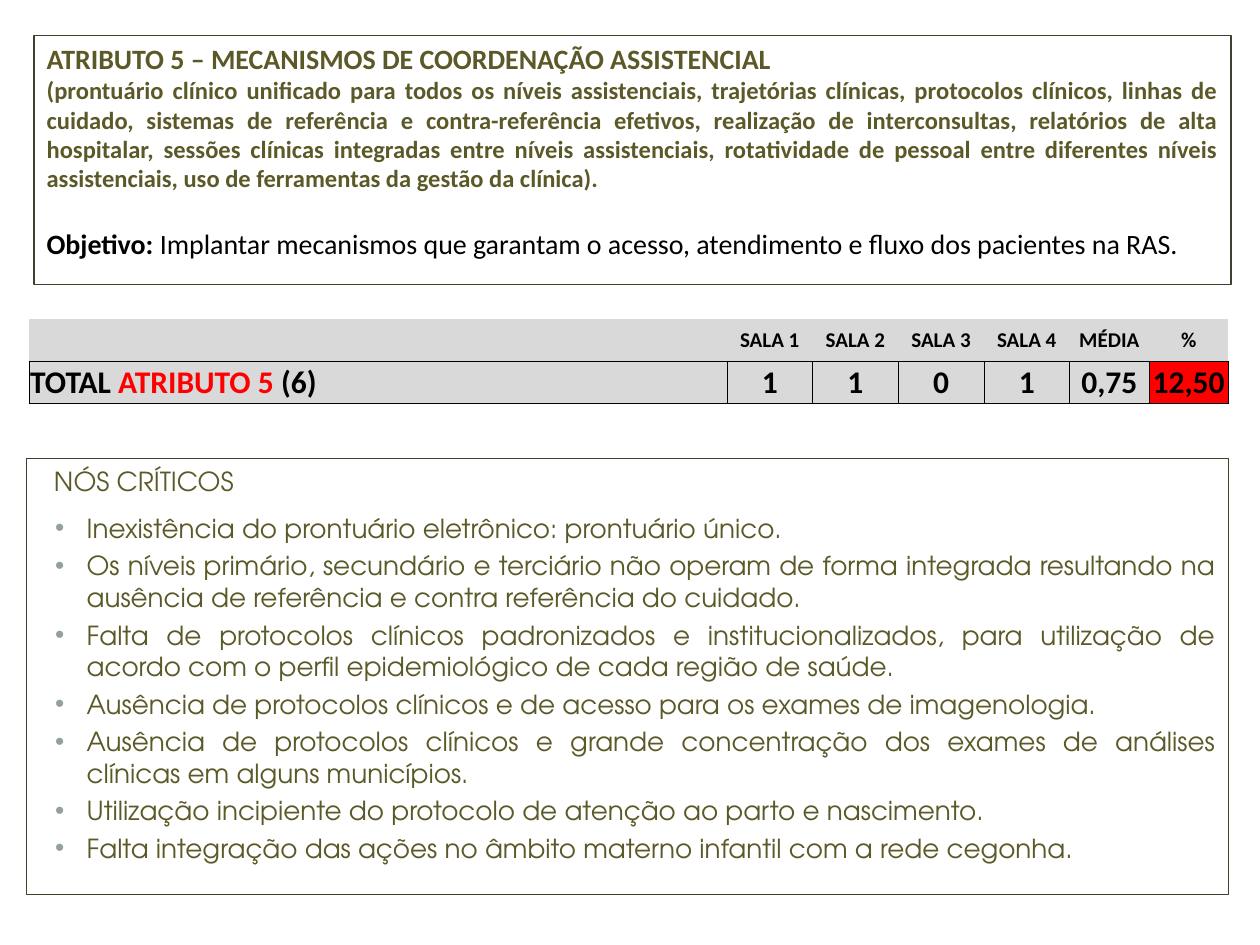
from dataclasses import dataclass

from pptx import Presentation
from pptx.dml.color import RGBColor as RGB
from pptx.enum.shapes import MSO_SHAPE as Shape
from pptx.enum.text import MSO_ANCHOR as Anchor, MSO_AUTO_SIZE as Fit, PP_ALIGN as Align
from pptx.oxml import parse_xml
from pptx.oxml.ns import nsdecls, qn
from pptx.util import Inches, Pt


@dataclass(frozen=True)
class Theme:
    olive: str = "5C5928"
    edge: str = "42402C"
    dot: str = "93A299"
    black: str = "000000"
    white: str = "FFFFFF"
    gray: str = "D9D9D9"
    red: str = "FF0000"
    sans: str = "Calibri"
    round: str = "TeX Gyre Adventor"
    head: int = 16
    note: int = 14
    list: int = 15
    label: int = 12
    total: int = 18


THEME = Theme()
PLAIN = "{2D5ABB26-0587-4C30-8999-92F81FD0307C}"  # table style without grid

TITLE = "ATRIBUTO 5 – MECANISMOS DE COORDENAÇÃO ASSISTENCIAL"
SCOPE = (
    "(prontuário clínico unificado para todos os níveis assistenciais, trajetórias "
    "clínicas, protocolos clínicos, linhas de cuidado, sistemas de referência e "
    "contra-referência efetivos, realização de interconsultas, relatórios de alta "
    "hospitalar, sessões clínicas integradas entre níveis assistenciais, rotatividade "
    "de pessoal entre diferentes níveis assistenciais, uso de ferramentas da gestão "
    "da clínica)."
)
GOAL = ("Implantar mecanismos que garantam o acesso, atendimento e fluxo dos "
        "pacientes na RAS.")
KNOTS = [
    "Inexistência do prontuário eletrônico: prontuário único.",
    "Os níveis primário, secundário e terciário não operam de forma integrada "
    "resultando na ausência de referência e contra referência do cuidado.",
    "Falta de protocolos clínicos padronizados e institucionalizados, para utilização "
    "de acordo com o perfil epidemiológico de cada região de saúde.",
    "Ausência de protocolos clínicos e de acesso para os exames de imagenologia.",
    "Ausência de protocolos clínicos e grande concentração dos exames de análises "
    "clínicas em alguns municípios.",
    "Utilização incipiente do protocolo de atenção ao parto e nascimento.",
    "Falta integração das ações no âmbito materno infantil com a rede cegonha.",
]
WIDTHS = [3.98, 0.62, 0.94] + [0.68] * 4 + [0.63] * 2
LABELS = ["SALA 1", "SALA 2", "SALA 3", "SALA 4", "MÉDIA", "%"]
SCORES = ["1", "1", "0", "1", "0,75", "12,50"]
LEAD = len(WIDTHS) - len(LABELS)  # columns under the row heading


def style(font, size, color, face=THEME.sans, bold=True):
    font.size, font.name, font.bold = Pt(size), face, bold
    font.color.rgb = RGB.from_string(color)


def frame(shape, box):
    """Place a white, thinly outlined text panel."""
    shape.left, shape.top, shape.width, shape.height = map(Inches, box)
    shape.shadow.inherit = False
    shape.fill.solid()
    shape.fill.fore_color.rgb = RGB.from_string(THEME.white)
    shape.line.color.rgb = RGB.from_string(THEME.edge)
    shape.line.width = Pt(0.75)
    text = shape.text_frame
    text.word_wrap, text.auto_size = True, Fit.NONE
    text.vertical_anchor = Anchor.TOP
    return text


def add_head(slide, box):
    text = frame(slide.shapes.title, box)
    text.text = "\n".join([TITLE, SCOPE, "Objetivo: "])
    looks = [(THEME.head, THEME.olive), (THEME.note, THEME.olive),
             (THEME.head, THEME.black)]
    for para, (size, color) in zip(text.paragraphs, looks):
        para.alignment = Align.JUSTIFY
        style(para.font, size, color)
    para.space_before = Pt(19.5)
    run = para.add_run()
    run.text, run.font.bold = GOAL, False


def rule(cell):
    """Draw a thin line on all four sides of a cell."""
    props = cell._tc.get_or_add_tcPr()
    for spot, side in enumerate(("lnL", "lnR", "lnT", "lnB")):
        props.insert(spot, parse_xml(
            f'<a:{side} {nsdecls("a")} w="6350"><a:solidFill>'
            f'<a:srgbClr val="{THEME.black}"/></a:solidFill></a:{side}>'))


def add_scores(slide, box):
    grid = slide.shapes.add_table(2, len(WIDTHS), *map(Inches, box)).table
    grid.first_row = grid.horz_banding = False
    grid._tbl.tblPr.find(qn("a:tableStyleId")).text = PLAIN
    for col, width in zip(grid.columns, WIDTHS):
        col.width = Inches(width)
    rows = [([""] * LEAD + LABELS, THEME.label), ([""] * LEAD + SCORES, THEME.total)]
    for row, (words, size) in enumerate(rows):
        for col, word in enumerate(words):
            cell = grid.cell(row, col)
            cell.text, cell.vertical_anchor = word, Anchor.MIDDLE
            cell.margin_left = cell.margin_right = cell.margin_top = Inches(0.01)
            cell.margin_bottom = 0
            cell.fill.solid()
            cell.fill.fore_color.rgb = RGB.from_string(THEME.gray)
            para = cell.text_frame.paragraphs[0]
            para.alignment = Align.CENTER
            style(para.font, size, THEME.black)
            if row:
                rule(cell)
    cell.fill.fore_color.rgb = RGB.from_string(THEME.red)

    # Row heading
    first = grid.cell(1, 0)
    first.merge(grid.cell(1, LEAD - 1))
    para = first.text_frame.paragraphs[0]
    para.alignment = Align.LEFT
    for word, color in (("TOTAL ", THEME.black), ("ATRIBUTO 5 ", THEME.red),
                        ("(6)", THEME.black)):
        run = para.add_run()
        run.text = word
        style(run.font, THEME.total, color)


def indent(para, left, hang=0.0):
    props = para._p.get_or_add_pPr()
    props.set("marL", str(Inches(left)))
    props.set("indent", str(Inches(-hang)))
    return props


def add_knots(slide, box):
    panel = slide.shapes.add_shape(Shape.RECTANGLE, *map(Inches, box))
    text = frame(panel, box)
    text.text = "\n".join(["NÓS CRÍTICOS", *KNOTS])
    for spot, para in enumerate(text.paragraphs):
        para.alignment = Align.JUSTIFY
        style(para.font, THEME.list, THEME.olive, THEME.round, False)
        if not spot:
            indent(para, 0.12)
            continue
        para.space_before = Pt(9 if spot == 1 else 3.5)
        props = indent(para, 0.38, 0.25)
        marks = (f'<a:buClr {nsdecls("a")}><a:srgbClr val="{THEME.dot}"/></a:buClr>',
                 f'<a:buFont {nsdecls("a")} typeface="Arial"/>',
                 f'<a:buChar {nsdecls("a")} char="•"/>')
        place = props.index(props.find(qn("a:spcBef"))) + 1
        for step, mark in enumerate(marks):
            props.insert(place + step, parse_xml(mark))


def main():
    deck = Presentation()
    deck.slide_width, deck.slide_height = Inches(10), Inches(7.5)
    slide = deck.slides.add_slide(deck.slide_layouts[5])
    add_head(slide, (0.27, 0.28, 9.5, 1.98))
    add_knots(slide, (0.21, 3.64, 9.54, 3.46))
    add_scores(slide, (0.23, 2.53, 9.53, 0.67))
    deck.save("out.pptx")


if __name__ == "__main__":
    main()
